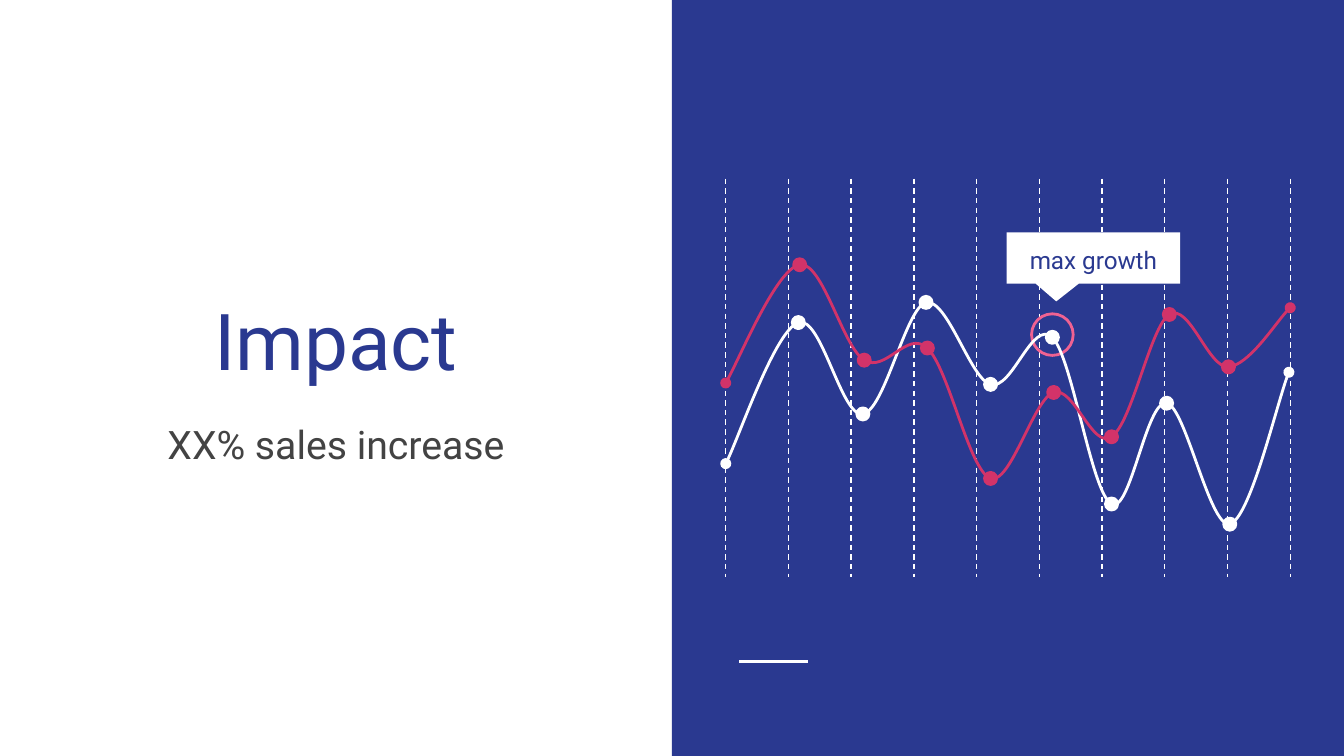
from dataclasses import dataclass

import pptx
import pptx.dml.color
import pptx.enum.dml
import pptx.enum.shapes
import pptx.enum.text
import pptx.oxml
import pptx.oxml.ns
import pptx.util
from lxml import etree
from pptx.util import Inches

qn = pptx.oxml.ns.qn
SHAPE = pptx.enum.shapes.MSO_SHAPE
ANCHOR = pptx.enum.text.MSO_ANCHOR

SLIDE_WIDTH = 10
SLIDE_HEIGHT = SLIDE_WIDTH * 9 / 16


@dataclass(frozen=True)
class Theme:
    font: str = "Roboto"
    blue: str = "2A3990"
    white: str = "FFFFFF"
    red: str = "D23369"
    pink: str = "F06292"
    gray: str = "434343"
    title: float = 42
    subtitle: float = 21
    label: float = 13
    line: float = 1.5
    grid: float = 0.75


THEME = Theme()

# Each curve is a start point followed by (control, control, end) triples.
WHITE_CURVE = [
    (5.4, 3.45),
    (5.49, 3.28), (5.77, 2.46), (5.94, 2.4),
    (6.11, 2.34), (6.26, 3.11), (6.42, 3.08),
    (6.58, 3.06), (6.74, 2.29), (6.89, 2.25),
    (7.05, 2.22), (7.22, 2.82), (7.37, 2.86),
    (7.53, 2.91), (7.68, 2.37), (7.83, 2.51),
    (7.98, 2.66), (8.12, 3.67), (8.27, 3.75),
    (8.41, 3.83), (8.53, 2.97), (8.68, 3),
    (8.82, 3.02), (9, 3.93), (9.15, 3.9),
    (9.3, 3.86), (9.51, 2.96), (9.59, 2.77),
]
RED_CURVE = [
    (5.4, 2.85),
    (5.49, 2.7), (5.78, 2), (5.95, 1.97),
    (6.12, 1.94), (6.27, 2.58), (6.43, 2.68),
    (6.59, 2.78), (6.75, 2.45), (6.9, 2.59),
    (7.06, 2.74), (7.21, 3.5), (7.37, 3.56),
    (7.52, 3.61), (7.69, 2.97), (7.84, 2.92),
    (7.99, 2.87), (8.13, 3.35), (8.27, 3.25),
    (8.42, 3.16), (8.56, 2.43), (8.7, 2.34),
    (8.85, 2.25), (8.99, 2.74), (9.14, 2.73),
    (9.29, 2.72), (9.52, 2.36), (9.6, 2.29),
]


def rgb(color):
    return pptx.dml.color.RGBColor.from_string(color)


def set_line(line, color, width):
    line.color.rgb = rgb(color)
    line.width = pptx.util.Pt(width)


def style_shape(sp, fill=None, line=None):
    sp.shadow.inherit = False
    if fill:
        sp.fill.solid()
        sp.fill.fore_color.rgb = rgb(fill)
    else:
        sp.fill.background()
    if line:
        set_line(sp.line, line, THEME.line)
    else:
        sp.line.fill.background()


def add_shape(slide, kind, left, top, width, height, fill=None, line=None):
    sp = slide.shapes.add_shape(
        kind, Inches(left), Inches(top), Inches(width), Inches(height))
    style_shape(sp, fill, line)
    return sp


def add_circle(slide, center, diameter, fill, line):
    x, y = center
    add_shape(slide, SHAPE.OVAL, x - diameter / 2, y - diameter / 2,
              diameter, diameter, fill, line)


def add_line(slide, x1, y1, x2, y2, width):
    line = slide.shapes.add_connector(
        pptx.enum.shapes.MSO_CONNECTOR.STRAIGHT,
        Inches(x1), Inches(y1), Inches(x2), Inches(y2))
    set_line(line.line, THEME.white, width)
    etree.SubElement(line._element.spPr, qn("a:effectLst"))
    return line


def add_text(slide, text, left, top, width, height, size, color, anchor):
    box = slide.shapes.add_textbox(
        Inches(left), Inches(top), Inches(width), Inches(height))
    tf = box.text_frame
    tf.word_wrap = True
    tf.vertical_anchor = anchor
    tf.margin_left = tf.margin_right = Inches(0.1)
    tf.margin_top = tf.margin_bottom = Inches(0.1)
    tf.text = text
    p = tf.paragraphs[0]
    p.alignment = pptx.enum.text.PP_ALIGN.CENTER
    font = p.runs[0].font
    font.name = THEME.font
    font.size = pptx.util.Pt(size)
    font.color.rgb = rgb(color)
    return p


def add_curve(slide, points, color):
    """Draw a Bezier curve with round ends."""
    start, *rest = [(Inches(x), Inches(y)) for x, y in points]
    builder = slide.shapes.build_freeform(*start)
    builder.add_line_segments(rest, close=False)
    sp = builder.convert_to_shape()
    style_shape(sp, line=color)

    # Each run of three straight segments becomes one cubic segment.
    segments = list(sp._element.iter(qn("a:lnTo")))
    for first, second, third in zip(*[iter(segments)] * 3):
        first.tag = qn("a:cubicBezTo")
        for extra in (second, third):
            first.append(extra[0])
            extra.getparent().remove(extra)

    ln = sp.line._get_or_add_ln()
    for end in ("a:headEnd", "a:tailEnd"):
        etree.SubElement(ln, qn(end), type="oval", w="med", len="med")


def add_series(slide, points, color):
    """Draw a curve with a marker on every inner anchor point."""
    add_curve(slide, points, color)
    for anchor in points[3:-1:3]:
        add_circle(slide, anchor, 0.09, color, color)


def add_grid(slide, left=5.4, right=9.6, top=1.33, bottom=4.29, count=10):
    step = (right - left) / (count - 1)
    for i in range(count):
        x = left + i * step
        line = add_line(slide, x, top, x, bottom, THEME.grid)
        line.line.dash_style = pptx.enum.dml.MSO_LINE.DASH


def add_callout(slide):
    sp = add_shape(slide, SHAPE.ROUNDED_RECTANGULAR_CALLOUT,
                   7.49, 1.73, 1.29, 0.38, THEME.white)
    for i, value in enumerate((-0.214, 0.85, 0)):
        sp.adjustments[i] = value


def main():
    prs = pptx.Presentation()
    prs.slide_width = Inches(SLIDE_WIDTH)
    prs.slide_height = Inches(SLIDE_HEIGHT)
    slide = prs.slides.add_slide(prs.slide_layouts[6])

    half = SLIDE_WIDTH / 2
    add_shape(slide, SHAPE.RECTANGLE, half, 0, half, SLIDE_HEIGHT, THEME.blue)
    add_line(slide, 5.5, 4.92, 6.01, 4.92, THEME.line)
    add_text(slide, "Impact", 0.29, 1.26, 4.42, 1.71,
             THEME.title, THEME.blue, ANCHOR.BOTTOM)
    add_text(slide, "XX% sales increase", 0.29, 3.03, 4.42, 1.39,
             THEME.subtitle, THEME.gray, ANCHOR.TOP)

    add_grid(slide)
    add_circle(slide, (7.83, 2.49), 0.31, None, THEME.pink)
    add_series(slide, WHITE_CURVE, THEME.white)
    add_callout(slide)
    add_series(slide, RED_CURVE, THEME.red)
    label = add_text(slide, "max growth", 7.49, 1.76, 1.29, 0.31,
                     THEME.label, THEME.blue, ANCHOR.MIDDLE)
    label.line_spacing = 1.15

    prs.save("out.pptx")


if __name__ == "__main__":
    main()
